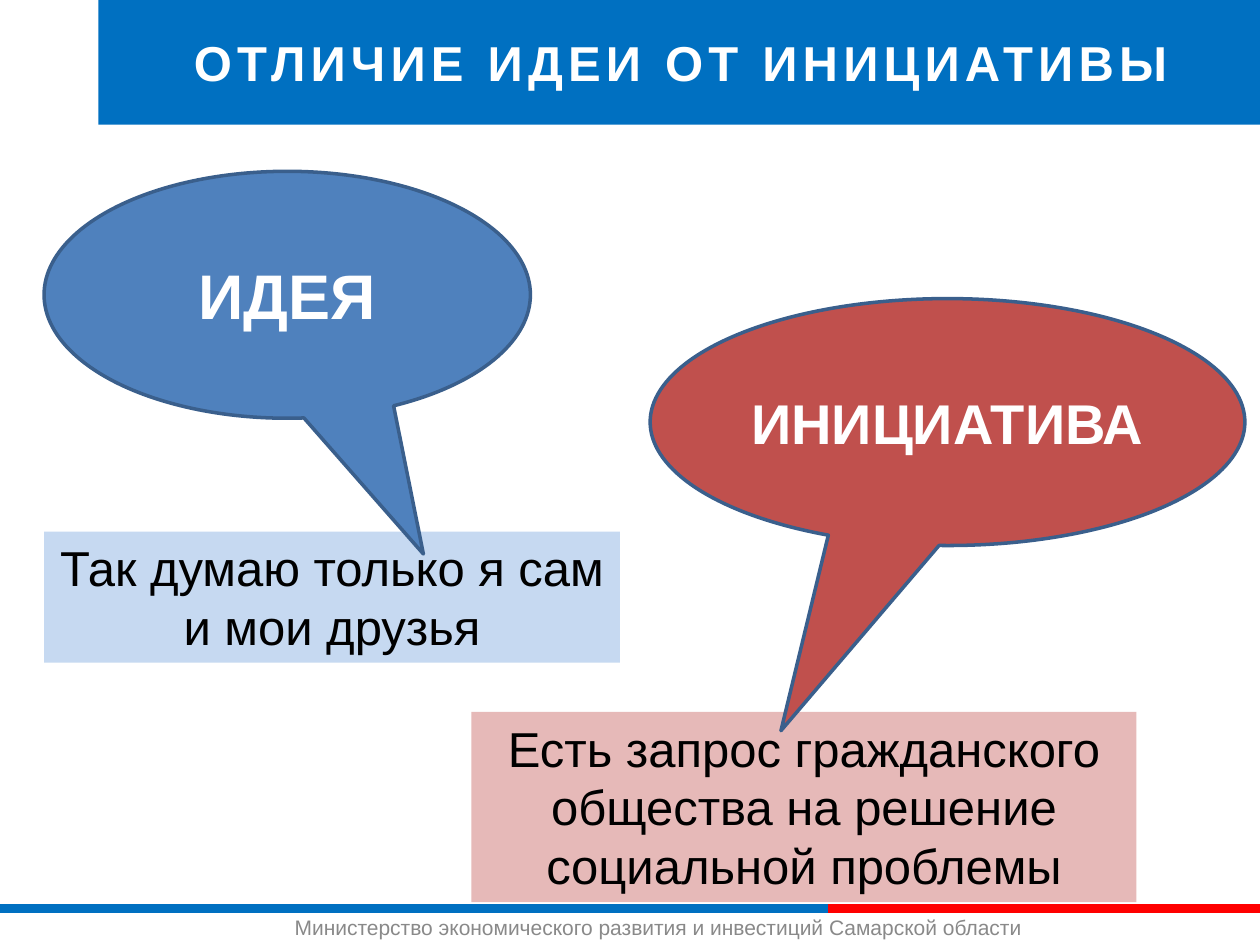
from lxml.etree import SubElement
from pptx import Presentation
from pptx.dml.color import RGBColor
from pptx.enum.shapes import MSO_CONNECTOR as CONNECTOR, MSO_SHAPE as SHAPE
from pptx.enum.text import MSO_ANCHOR as ANCHOR, PP_ALIGN as ALIGN
from pptx.oxml.ns import qn
from pptx.util import Inches, Pt

FONT = "Arial"
COLORS = {
    "white": "FFFFFF",
    "black": "000000",
    "footer": "898989",
    "banner": "0070C1",
    "red": "FF0000",
    "idea": "4F81BD",
    "idea_note": "C6D9F1",
    "initiative": "C0504D",
    "initiative_note": "E6B9B8",
    "outline": "3A5F8C",
}


def color(name):
    return RGBColor.from_string(COLORS[name])


def place(item, left, top, width, height):
    item.left, item.top = Inches(left), Inches(top)
    item.width, item.height = Inches(width), Inches(height)


def fill(item, name):
    item.fill.solid()
    item.fill.fore_color.rgb = color(name)


def write(frame, lines, size, ink, bold=False, align=ALIGN.CENTER, anchor=ANCHOR.MIDDLE):
    """Write one paragraph per line and return the runs."""
    frame.word_wrap = True
    frame.vertical_anchor = anchor
    runs = []
    for index, line in enumerate(lines):
        paragraph = frame.add_paragraph() if index else frame.paragraphs[0]
        paragraph.alignment = align
        run = paragraph.add_run()
        run.text = line
        run.font.name = FONT
        run.font.size = Pt(size)
        run.font.bold = bold
        run.font.color.rgb = color(ink)
        runs.append(run)
    return runs


def add_title(slide, text):
    banner = slide.shapes.title
    place(banner, 0.78, 0, 9.25, 0.99)
    fill(banner, "banner")
    for run in write(banner.text_frame, [text], 28, "white", bold=True):
        run.font._element.set("spc", "300")


def add_footer_line(slide, start, end, name):
    y = Inches(7.21)
    rule = slide.shapes.add_connector(CONNECTOR.STRAIGHT, Inches(start), y, Inches(end), y)
    rule.line.color.rgb = color(name)
    rule.line.width = Pt(5)
    SubElement(rule._element.spPr, qn("a:effectLst"))


def add_footer(slide, text):
    add_footer_line(slide, 0, 6.57, "banner")
    add_footer_line(slide, 6.57, 10, "red")
    box = slide.shapes.add_textbox(Inches(2.24), Inches(7.21), Inches(6.54), Inches(0.3))
    write(box.text_frame, [text], 12, "footer", align=ALIGN.LEFT, anchor=ANCHOR.TOP)


def add_note(slide, bounds, lines, name):
    note = slide.shapes.add_textbox(*map(Inches, bounds))
    fill(note, name)
    write(note.text_frame, lines, 28, "black", anchor=ANCHOR.TOP)


def add_callout(slide, bounds, tip, text, size, name):
    """Add a speech bubble; tip is its pointer relative to the centre."""
    bubble = slide.shapes.add_shape(SHAPE.OVAL_CALLOUT, *map(Inches, bounds))
    bubble.shadow.inherit = False
    bubble.adjustments[0], bubble.adjustments[1] = tip
    fill(bubble, name)
    bubble.line.color.rgb = color("outline")
    bubble.line.width = Pt(2)
    write(bubble.text_frame, [text], size, "white", bold=True)


def main():
    deck = Presentation()
    deck.slide_width, deck.slide_height = Inches(10), Inches(7.5)
    slide = deck.slides.add_slide(deck.slide_layouts[5])

    add_footer(slide, "Министерство экономического развития и инвестиций Самарской области")
    add_title(slide, "ОТЛИЧИЕ ИДЕИ ОТ ИНИЦИАТИВЫ")
    add_note(slide, (0.35, 4.22, 4.57, 1.04),
             ["Так думаю только я сам", "и мои друзья"], "idea_note")
    add_note(slide, (3.74, 5.65, 5.28, 1.51),
             ["Есть запрос гражданского общества на решение социальной проблемы"],
             "initiative_note")
    add_callout(slide, (5.16, 2.37, 4.72, 1.96), (-0.28, 1.25),
                "ИНИЦИАТИВА", 32, "initiative")
    add_callout(slide, (0.35, 1.36, 3.86, 1.96), (0.28, 1.05), "ИДЕЯ", 36, "idea")

    deck.save("out.pptx")


if __name__ == "__main__":
    main()
